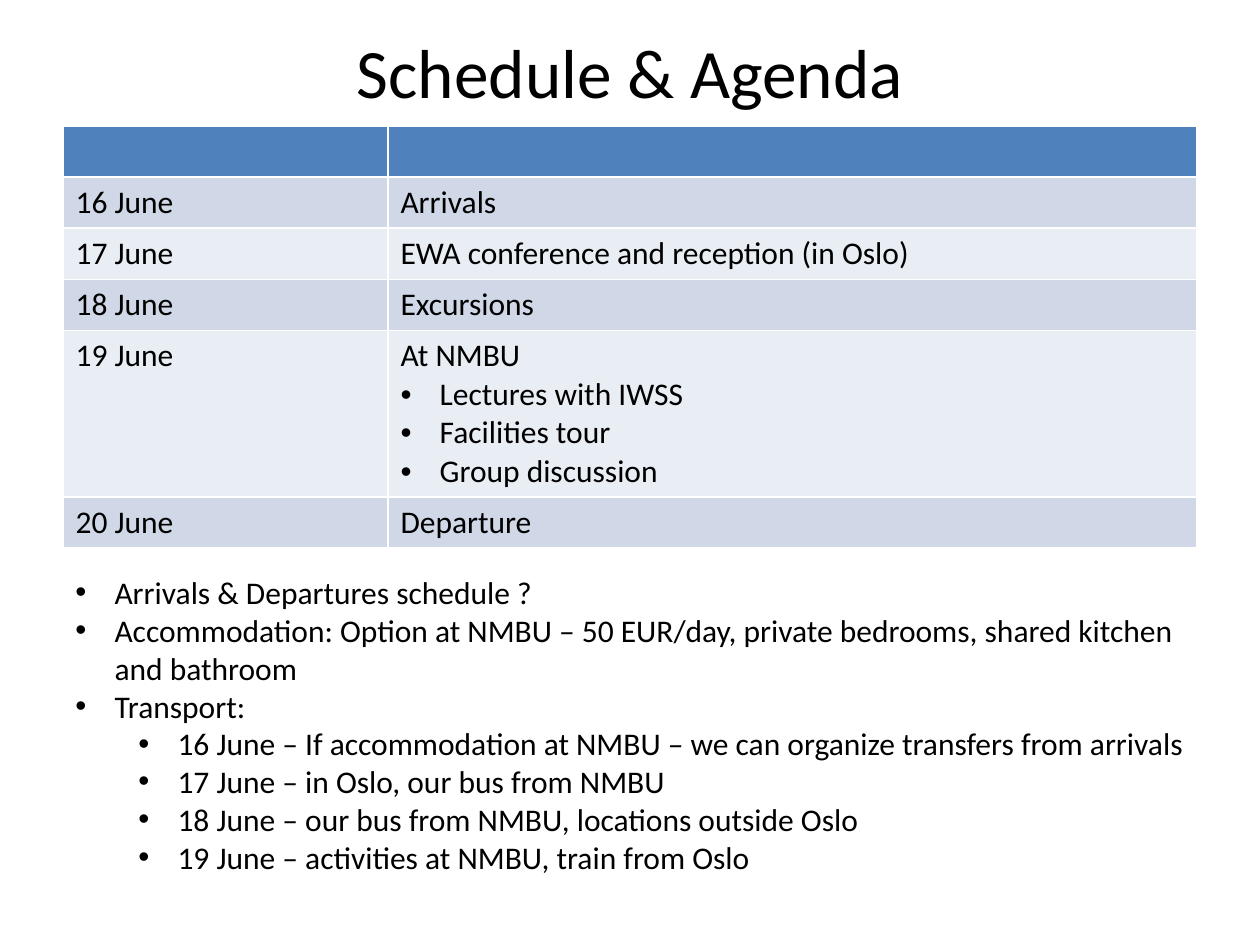
from lxml import etree
from pptx import Presentation
from pptx.dml.color import RGBColor
from pptx.enum import text as t
from pptx.oxml.ns import qn
from pptx.util import Cm, Pt

FONT = "Calibri"
BLACK = "000000"
HEADER_FILL = "4F81BD"
BAND_FILLS = ("D0D8E8", "E9EDF4")
LEFT, WIDTH = Cm(1.27), Cm(22.86)
DATE_WIDTH = Cm(6.55)
ROW_HEIGHT = Cm(1.03)
BULLET_HANG = Cm(0.79)
LEVEL_STEP = Cm(1.27)

# Each day holds a date, an event and the bulleted parts of that event.
DAYS = [
    ("16 June", "Arrivals", []),
    ("17 June", "EWA conference and reception (in Oslo)", []),
    ("18 June", "Excursions", []),
    ("19 June", "At NMBU", ["Lectures with IWSS", "Facilities tour", "Group discussion"]),
    ("20 June", "Departure", []),
]

# Each note holds its outline level and its text.
NOTES = [
    (0, "Arrivals & Departures schedule ?"),
    (0, "Accommodation: Option at NMBU – 50 EUR/day, private bedrooms, "
        "shared kitchen and bathroom"),
    (0, "Transport:"),
    (1, "16 June – If accommodation at NMBU – we can organize transfers from arrivals"),
    (1, "17 June – in Oslo, our bus from NMBU"),
    (1, "18 June – our bus from NMBU, locations outside Oslo"),
    (1, "19 June – activities at NMBU, train from Oslo"),
]


def color(hex_string):
    return RGBColor.from_string(hex_string)


def add_bullet(paragraph, level):
    paragraph.level = level
    properties = paragraph._p.get_or_add_pPr()
    properties.set("marL", str(BULLET_HANG + level * LEVEL_STEP))
    properties.set("indent", str(-BULLET_HANG))
    etree.SubElement(properties, qn("a:buFont")).set("typeface", "Arial")
    etree.SubElement(properties, qn("a:buChar")).set("char", "•")


def write(frame, content, size=18, align=t.PP_ALIGN.LEFT, bullet_level=None):
    """Fill the frame's empty first paragraph, or append a new one."""
    paragraph = frame.paragraphs[-1]
    if paragraph.runs:
        paragraph = frame.add_paragraph()
    paragraph.alignment = align
    if bullet_level is not None:
        add_bullet(paragraph, bullet_level)
    run = paragraph.add_run()
    run.text = content
    run.font.name = FONT
    run.font.size = Pt(size)
    run.font.color.rgb = color(BLACK)


def add_title(slide, content):
    title = slide.shapes.title
    title.left, title.top, title.width, title.height = Cm(0), Cm(0.43), Cm(25.4), Cm(1.98)
    frame = title.text_frame
    frame.auto_size = t.MSO_AUTO_SIZE.NONE
    frame.vertical_anchor = t.MSO_ANCHOR.MIDDLE
    write(frame, content, size=39.6, align=t.PP_ALIGN.CENTER)


def add_schedule(slide, days):
    row_count = len(days) + 1
    table = slide.shapes.add_table(
        row_count, 2, LEFT, Cm(2.54), WIDTH, ROW_HEIGHT * row_count
    ).table
    table.columns[0].width = DATE_WIDTH
    table.columns[1].width = WIDTH - DATE_WIDTH

    for index, row in enumerate(table.rows):
        row.height = ROW_HEIGHT
        fill = BAND_FILLS[(index - 1) % 2] if index else HEADER_FILL
        for cell in row.cells:
            cell.fill.solid()
            cell.fill.fore_color.rgb = color(fill)

    for index, (date, event, parts) in enumerate(days, start=1):
        write(table.cell(index, 0).text_frame, date)
        event_frame = table.cell(index, 1).text_frame
        write(event_frame, event)
        for part in parts:
            write(event_frame, part, bullet_level=0)


def add_notes(slide, notes):
    frame = slide.shapes.add_textbox(LEFT, Cm(11.43), WIDTH, Cm(7.19)).text_frame
    frame.word_wrap = True
    frame.auto_size = t.MSO_AUTO_SIZE.SHAPE_TO_FIT_TEXT
    for level, note in notes:
        write(frame, note, bullet_level=level)


def main():
    presentation = Presentation()
    presentation.slide_width, presentation.slide_height = Cm(25.4), Cm(19.05)
    slide = presentation.slides.add_slide(presentation.slide_layouts.get_by_name("Title Only"))
    add_title(slide, "Schedule & Agenda")
    add_schedule(slide, DAYS)
    add_notes(slide, NOTES)
    presentation.save("out.pptx")


if __name__ == "__main__":
    main()
